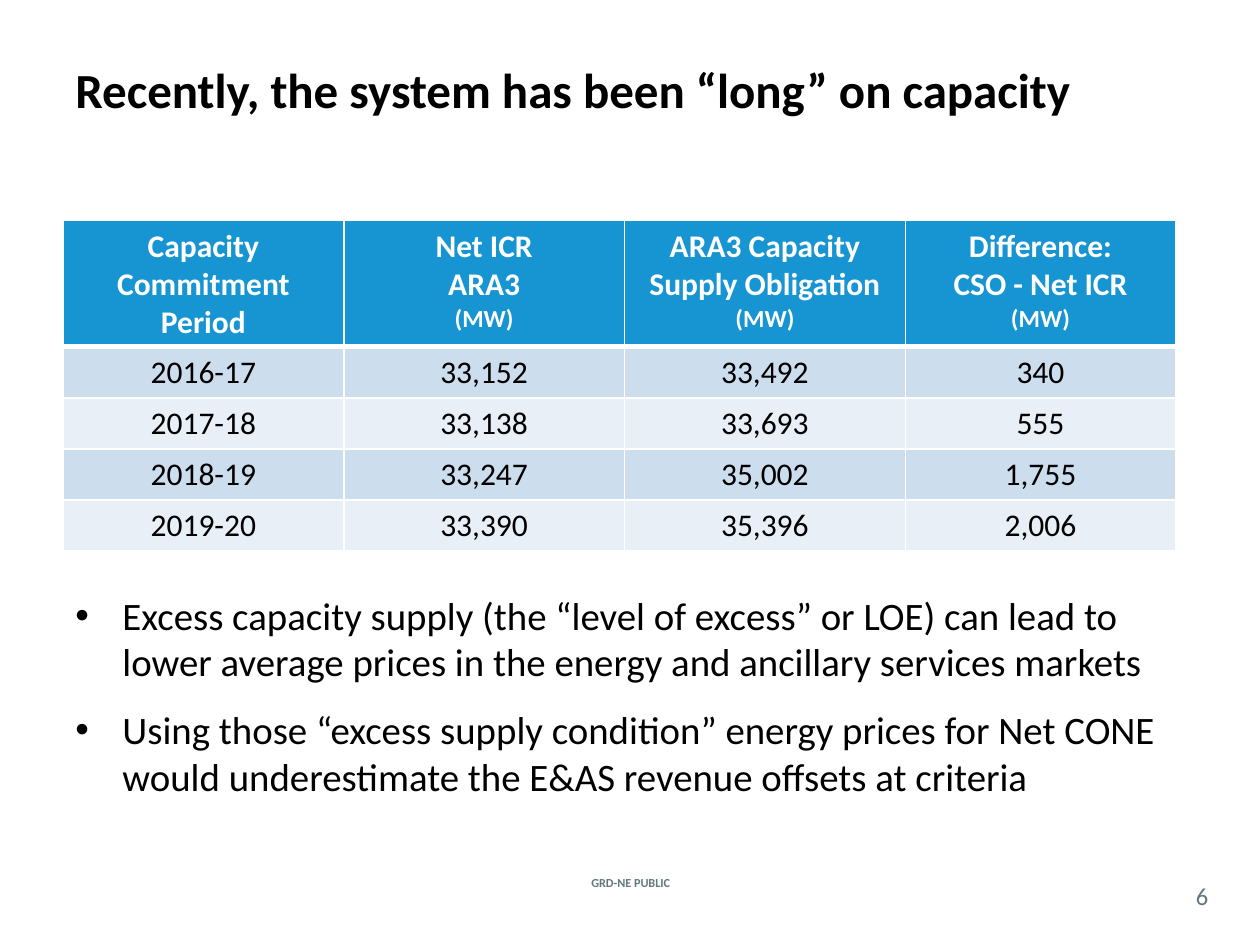
from dataclasses import dataclass

from lxml import etree
from pptx import Presentation
from pptx import util as u
from pptx.dml.color import RGBColor
from pptx.enum import text
from pptx.oxml import ns


@dataclass(frozen=True)
class Theme:
    font: str = "Calibri"
    black: str = "000000"
    white: str = "FFFFFF"
    gray: str = "62777F"
    header: str = "1795D2"
    bands: tuple[str, str] = ("CCDDEE", "E8EFF7")
    title_size: float = 28
    body_size: float = 22.2
    table_size: float = 18
    small_size: float = 14
    footer_size: float = 7


@dataclass(frozen=True)
class Style:
    size: float
    color: str
    bold: bool = False


@dataclass(frozen=True)
class Box:
    left: float
    top: float
    width: float
    height: float

    def lengths(self) -> tuple:
        return tuple(map(u.Cm, (self.left, self.top, self.width, self.height)))


THEME = Theme()
TITLE = Style(THEME.title_size, THEME.black, True)
BODY = Style(THEME.body_size, THEME.black)
HEADING = Style(THEME.table_size, THEME.white, True)
UNIT = Style(THEME.small_size, THEME.white, True)
VALUE = Style(THEME.table_size, THEME.black)
FOOTER = Style(THEME.footer_size, THEME.gray, True)
NUMBER = Style(THEME.small_size, THEME.gray)

HEADINGS = [
    ["Capacity Commitment Period"],
    ["Net ICR", "ARA3", "(MW)"],
    ["ARA3 Capacity Supply Obligation", "(MW)"],
    ["Difference:", "CSO - Net ICR", "(MW)"],
]
ROWS = [
    ("2016-17", "33,152", "33,492", "340"),
    ("2017-18", "33,138", "33,693", "555"),
    ("2018-19", "33,247", "35,002", "1,755"),
    ("2019-20", "33,390", "35,396", "2,006"),
]
BULLETS = [
    "Excess capacity supply (the “level of excess” or LOE) can lead to "
    "lower average prices in the energy and ancillary services markets",
    "Using those “excess supply condition” energy prices for Net CONE "
    "would underestimate the E&AS revenue offsets at criteria",
]
COLUMN_WIDTHS = (5.66, 5.66, 5.66, 5.45)
HEADER_HEIGHT = 2.54
ROW_HEIGHT = 1.03


def add_run(paragraph, content: str, style: Style) -> None:
    run = paragraph.add_run()
    run.text = content
    run.font.name = THEME.font
    run.font.size = u.Pt(style.size)
    run.font.bold = style.bold
    run.font.color.rgb = RGBColor.from_string(style.color)


def next_paragraph(frame, index: int):
    return frame.add_paragraph() if index else frame.paragraphs[0]


def add_text_box(slide, box: Box, anchor: text.MSO_ANCHOR):
    frame = slide.shapes.add_textbox(*box.lengths()).text_frame
    frame.word_wrap = True
    frame.vertical_anchor = anchor
    return frame


def add_line(slide, box: Box, content: str, style: Style,
             alignment: text.PP_ALIGN = text.PP_ALIGN.CENTER):
    frame = add_text_box(slide, box, text.MSO_ANCHOR.MIDDLE)
    paragraph = frame.paragraphs[0]
    paragraph.alignment = alignment
    add_run(paragraph, content, style)
    return frame


def add_bullets(slide, box: Box, items: list[str]) -> None:
    frame = add_text_box(slide, box, text.MSO_ANCHOR.TOP)
    indent = u.Cm(0.95)
    for index, item in enumerate(items):
        paragraph = next_paragraph(frame, index)
        properties = paragraph._p.get_or_add_pPr()
        properties.set("marL", str(indent))
        properties.set("indent", str(-indent))
        etree.SubElement(properties, ns.qn("a:buFont"), typeface="Arial")
        etree.SubElement(properties, ns.qn("a:buChar"), char="•")
        if index:
            paragraph.space_before = u.Pt(12)
        add_run(paragraph, item, BODY)


def set_borders(cell, bottom: float, top: float) -> None:
    properties = cell._tc.get_or_add_tcPr()
    for side, width in (("L", 1), ("R", 1), ("T", top), ("B", bottom)):
        line = etree.SubElement(properties, ns.qn(f"a:ln{side}"), w=str(u.Pt(width)))
        fill = etree.SubElement(line, ns.qn("a:solidFill"))
        etree.SubElement(fill, ns.qn("a:srgbClr"), val=THEME.white)


def fill_cell(cell, lines: list[str], style: Style, color: str,
              top: float = 1, bottom: float = 1) -> None:
    set_borders(cell, bottom, top)
    cell.fill.solid()
    cell.fill.fore_color.rgb = RGBColor.from_string(color)
    for index, line in enumerate(lines):
        paragraph = next_paragraph(cell.text_frame, index)
        paragraph.alignment = text.PP_ALIGN.CENTER
        add_run(paragraph, line, UNIT if line == "(MW)" else style)


def add_capacity_table(slide, left: float, top: float) -> None:
    box = Box(left, top, sum(COLUMN_WIDTHS), HEADER_HEIGHT + len(ROWS) * ROW_HEIGHT)
    table = slide.shapes.add_table(len(ROWS) + 1, len(HEADINGS), *box.lengths()).table
    for column, width in zip(table.columns, COLUMN_WIDTHS):
        column.width = u.Cm(width)
    for index, row in enumerate(table.rows):
        row.height = u.Cm(ROW_HEIGHT if index else HEADER_HEIGHT)
    for column, lines in enumerate(HEADINGS):
        fill_cell(table.cell(0, column), lines, HEADING, THEME.header, bottom=3)
    for row, values in enumerate(ROWS, start=1):
        for column, value in enumerate(values):
            fill_cell(table.cell(row, column), [value], VALUE,
                      THEME.bands[(row - 1) % 2], top=3 if row == 1 else 1)


def main() -> None:
    presentation = Presentation()
    presentation.slide_width = u.Cm(25.4)
    presentation.slide_height = u.Cm(19.05)
    slide = presentation.slides.add_slide(presentation.slide_layouts[6])

    add_line(slide, Box(10.85, 17.58, 3.73, 0.43), "GRD-NE PUBLIC", FOOTER)
    number = add_line(slide, Box(23.7, 17.68, 1.07, 0.74), "6", NUMBER)
    number.margin_left = number.margin_right = 0
    number.margin_top = number.margin_bottom = 0
    add_line(slide, Box(1.27, 0.2, 22.86, 3.18),
             "Recently, the system has been “long” on capacity",
             TITLE, text.PP_ALIGN.LEFT)
    add_capacity_table(slide, 1.27, 4.45)
    add_bullets(slide, Box(1.27, 11.8, 22.86, 5.55), BULLETS)

    presentation.save("out.pptx")


if __name__ == "__main__":
    main()
